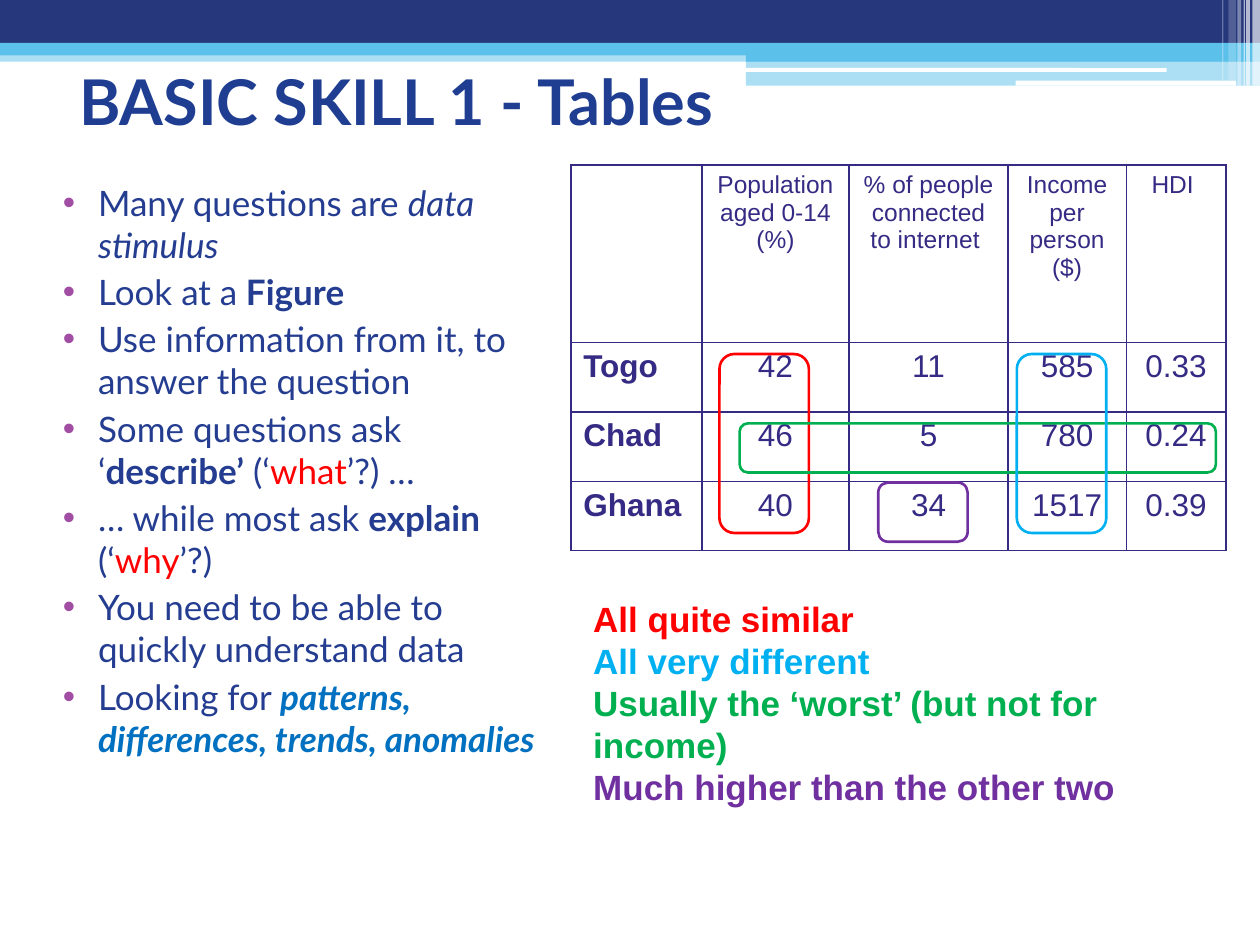
from lxml import etree
from pptx import Presentation
from pptx.dml.color import RGBColor
from pptx.enum import shapes, text
from pptx.oxml.ns import qn
from pptx.util import Inches, Pt

NAVY, SKY, WHITE, INK, BODY = "26377C", "5CC1EA", "FFFFFF", "352B84", "243D91"
RED, BLUE, GREEN, PURPLE = "FF0000", "00B0F0", "00B050", "7030A0"
RECT = shapes.MSO_SHAPE.RECTANGLE
ROUND = shapes.MSO_SHAPE.ROUNDED_RECTANGLE
CENTER = text.PP_ALIGN.CENTER

# left, top, width, height in grid cells, then colour and opacity
BANDS = [
    (0, 4, 100, 0.9, SKY, 50),
    (0, 0, 100, 3.4, NAVY, 100),
    (0, 3.4, 100, 1, SKY, 100),
    (59.2, 3.9, 40.8, 1, SKY, 100),
    (59.2, 4.8, 40.8, 2, SKY, 50),
]
SLOTS = [(59.1, 5.4, 33.5, 0.3), (80.6, 6.4, 17.5, 0.4)]
STRIPES = [
    (99.4, 0.6, 6.8, 65),
    (98.9, 0.3, 6.8, 65),
    (98.7, 0.1, 6.8, 60),
    (98.2, 0.3, 6.8, 40),
    (97.5, 0.6, 6.4, 20),
    (97, 0.1, 6.4, 30),
]
BOLD, RED_TEXT = {"bold": True}, {"color": RED}
POINTS = [
    [("Many questions are ", {}), ("data stimulus", {"italic": True})],
    [("Look at a", {}), (" Figure", BOLD)],
    [("Use information from it, to answer the question", {})],
    [("Some questions ask ‘", {}), ("describe’", BOLD), (" (‘", {}),
     ("what", RED_TEXT), ("’?) …", {})],
    [("… while most ask", {}), (" explain ", BOLD), ("(‘", {}),
     ("why", RED_TEXT), ("’?)", {})],
    [("You need to be able to quickly understand data", {})],
    [("Looking for ", {}),
     ("patterns, differences, trends, anomalies",
      {"color": "0070C0", "bold": True, "italic": True})],
]
DATA = [
    ["", "Population aged 0-14 (%)", "% of people connected to internet ",
     "Income per person ($)", "HDI "],
    ["Togo", "42", "11", "585", "0.33"],
    ["Chad", "46", "5", "780", "0.24"],
    ["Ghana", "40", "34", "1517", "0.39"],
]
RINGS = [
    (57.1, 28.1, 7.1, 14.2, RED),
    (58.7, 33.6, 37.8, 3.9, GREEN),
    (69.7, 38.3, 7.1, 4.7, PURPLE),
    (80.7, 28.1, 7.1, 14.2, BLUE),
]
FINDINGS = [
    ("All quite similar", RED),
    ("All very different", BLUE),
    ("Usually the ‘worst’ (but not for income)", GREEN),
    ("Much higher than the other two", PURPLE),
]


def color(value):
    """Turn a hex string into a colour."""
    return RGBColor.from_string(value)


def cells(count):
    """Turn grid cells, 100 by 75 on the page, into a length."""
    return Inches(count / 10)


class Painter:
    """Hold the style and the current slide."""

    def __init__(self, deck):
        """Add a blank page to the deck."""
        self.page = deck.slides.add_slide(deck.slide_layouts[6])

    def shape(self, kind, *at, fill=None, opacity=100, line=None):
        """Draw a preset shape with a fill or an outline."""
        shape = self.page.shapes.add_shape(kind, *map(cells, at))
        shape.shadow.inherit = False
        if fill:
            shape.fill.solid()
            shape.fill.fore_color.rgb = color(fill)
            if opacity < 100:
                tint = shape.fill._xPr.find(".//" + qn("a:srgbClr"))
                etree.SubElement(tint, qn("a:alpha"), val=str(opacity * 1000))
        else:
            shape.fill.background()
        if line:
            shape.line.color.rgb = color(line)
            shape.line.width = Pt(1.5)
        else:
            shape.line.fill.background()
        return shape

    def spans(self, para, parts, **base):
        """Write formatted spans into a paragraph."""
        for words, changes in parts:
            span = para.add_run()
            span.text = words
            style = {**base, **changes}
            span.font.color.rgb = color(style.pop("color"))
            for name, value in style.items():
                setattr(span.font, name, value)

    def bullet(self, para):
        """Give a paragraph a hanging coloured bullet."""
        props = para._p.get_or_add_pPr()
        props.set("marL", str(cells(4)))
        props.set("indent", str(cells(-2.8)))
        tint = etree.SubElement(props, qn("a:buClr"))
        etree.SubElement(tint, qn("a:srgbClr"), val="A04DA3")
        etree.SubElement(props, qn("a:buFont"), typeface="Arial")
        etree.SubElement(props, qn("a:buChar"), char="•")

    def text(self, *at, paras, bullets=False, anchor=text.MSO_ANCHOR.TOP, **base):
        """Add a text box of paragraphs made of spans."""
        frame = self.page.shapes.add_textbox(*map(cells, at)).text_frame
        frame.word_wrap = True
        frame.vertical_anchor = anchor
        for index, parts in enumerate(paras):
            para = frame.add_paragraph() if index else frame.paragraphs[0]
            if bullets:
                self.bullet(para)
                if index:
                    para.space_before = Pt(3)
            self.spans(para, parts, **base)

    def border(self, cell):
        """Rule all four sides of a table cell."""
        props = cell._tc.get_or_add_tcPr()
        for side in "LRTB":
            line = etree.SubElement(props, qn("a:ln" + side), w=str(Pt(1)))
            fill = etree.SubElement(line, qn("a:solidFill"))
            etree.SubElement(fill, qn("a:srgbClr"), val=INK)

    def table(self, left, top, widths, heights, data):
        """Add a ruled table with a heading row and a bold first column."""
        table = self.page.shapes.add_table(
            len(heights), len(widths),
            *map(cells, (left, top, sum(widths), sum(heights)))).table
        table.first_row = table.horz_banding = False
        for column, width in zip(table.columns, widths):
            column.width = cells(width)
        for r, (row, height) in enumerate(zip(table.rows, heights)):
            row.height = cells(height)
            for c, cell in enumerate(row.cells):
                self.border(cell)
                cell.fill.background()
                para = cell.text_frame.paragraphs[0]
                if c:
                    para.alignment = CENTER
                if data[r][c]:
                    self.spans(para, [(data[r][c], {})], name="Arial", color=INK,
                               size=Pt(18 if r else 14), bold=c == 0)


def main():
    """Build the slide."""
    deck = Presentation()
    deck.slide_width, deck.slide_height = cells(100), cells(75)
    painter = Painter(deck)
    for *at, fill, opacity in BANDS:
        painter.shape(RECT, *at, fill=fill, opacity=opacity)
    for at in SLOTS:
        painter.shape(ROUND, *at, fill=WHITE)
    for left, width, height, opacity in STRIPES:
        painter.shape(RECT, left, 0, width, height, fill=WHITE, opacity=opacity)
    painter.text(2.8, 13.9, 41.7, 53.1, paras=POINTS, bullets=True,
                 name="Lato", size=Pt(20), color=BODY)
    painter.table(45.3, 13.1, [10.4, 11.7, 12.6, 9.4, 7.9],
                  [14.1, 5.5, 5.5, 5.5], DATA)
    for *at, line in RINGS:
        painter.shape(ROUND, *at, line=line)
    painter.text(46.1, 46.9, 49.6, 14.5, name="Arial", size=Pt(20), bold=True,
                 paras=[[(words, {"color": tint})] for words, tint in FINDINGS])
    painter.text(5.3, 4.4, 67.6, 7.1, paras=[[("BASIC SKILL 1 - Tables", {})]],
                 anchor=text.MSO_ANCHOR.MIDDLE, name="Lato", size=Pt(36),
                 color="1F3D91", bold=True)
    deck.save("out.pptx")


if __name__ == "__main__":
    main()
